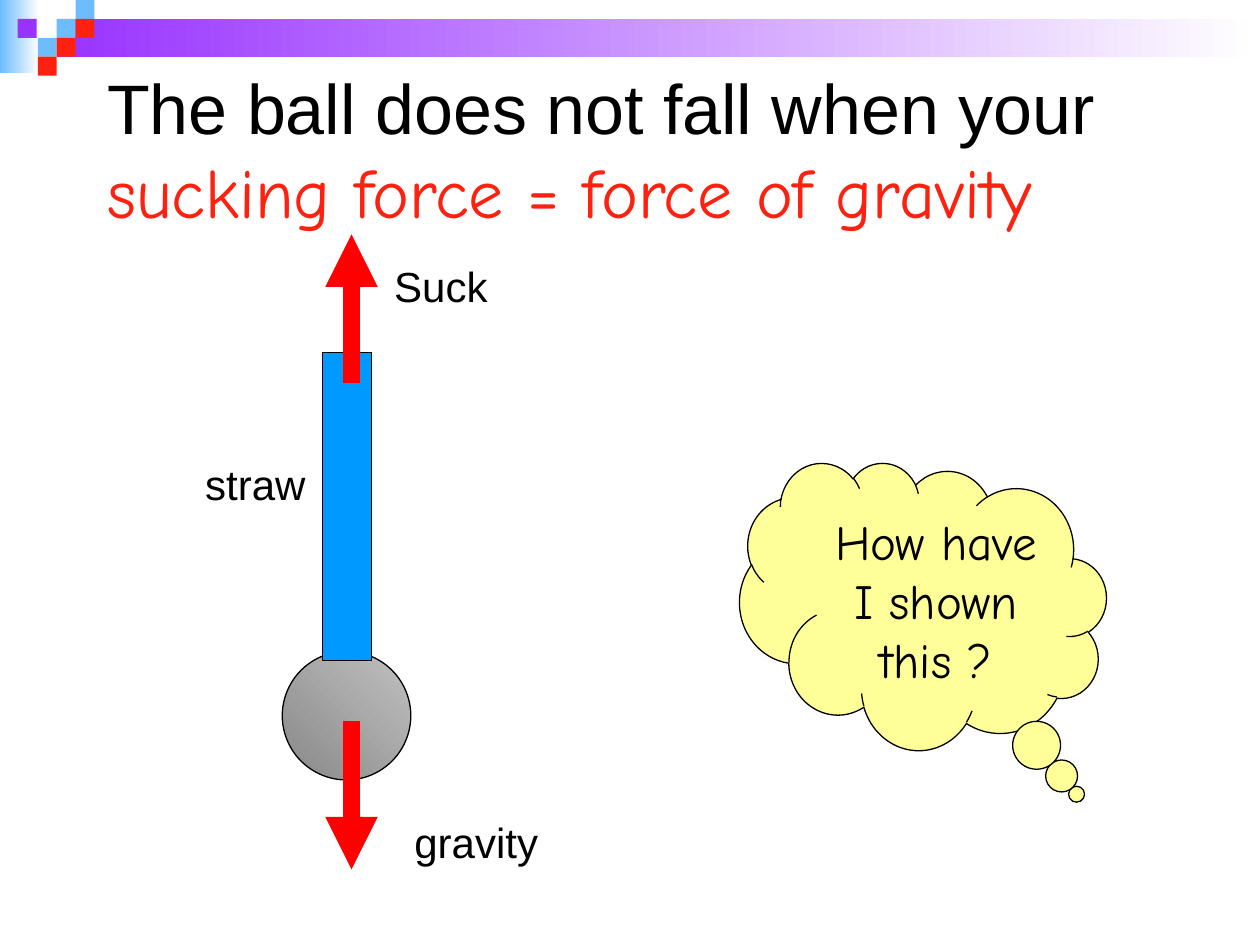
from typing import NamedTuple

from lxml.etree import SubElement
from pptx import Presentation
from pptx.dml.color import RGBColor
from pptx.enum.shapes import MSO_CONNECTOR, MSO_SHAPE
from pptx.enum.text import MSO_ANCHOR, MSO_AUTO_SIZE, PP_ALIGN
from pptx.oxml.ns import qn
from pptx.util import Inches, Pt

BLACK = RGBColor(0x00, 0x00, 0x00)
WHITE = RGBColor(0xFF, 0xFF, 0xFF)
PURPLE = RGBColor(0x99, 0x33, 0xFF)
SKY = RGBColor(0x6D, 0xBC, 0xFD)
SCARLET = RGBColor(0xFE, 0x21, 0x10)
ARROW_RED = RGBColor(0xFF, 0x00, 0x00)
STRAW_BLUE = RGBColor(0x00, 0x99, 0xFF)
DARK_GREY = RGBColor(0x89, 0x89, 0x89)
LIGHT_GREY = RGBColor(0xC0, 0xC0, 0xC0)
CLOUD_YELLOW = RGBColor(0xFF, 0xFF, 0x99)

TILE = 0.15
ARROW_X = 2.79


class Box(NamedTuple):
    left: float
    top: float
    width: float
    height: float

    def lengths(self):
        return [Inches(value) for value in self]


class Gradient(NamedTuple):
    start: RGBColor
    end: RGBColor
    angle: float = 0


class Tile(NamedTuple):
    left: float
    row: int
    color: RGBColor


class Label(NamedTuple):
    text: str
    box: Box


class Force(NamedTuple):
    start_y: float
    end_y: float


TILES = [
    Tile(0.45, 1, SKY),
    Tile(0.6, 0, SKY),
    Tile(0.6, 1, SCARLET),
    Tile(0.3, 2, SKY),
    Tile(0.14, 1, PURPLE),
    Tile(0.45, 2, SCARLET),
    Tile(0.3, 3, SCARLET),
]
FORCES = [Force(5.72, 6.9), Force(3.04, 1.86)]
LABELS = [
    Label("straw", Box(1.53, 3.59, 1.02, 0.5)),
    Label("Suck", Box(3.03, 2.02, 1.18, 0.5)),
    Label("gravity", Box(3.19, 6.43, 1.81, 0.5)),
]


def add_filled(slide, kind: MSO_SHAPE, box: Box, fill: RGBColor | Gradient,
               outlined: bool = False):
    shape = slide.shapes.add_shape(kind, *box.lengths())
    shape.shadow.inherit = False
    if isinstance(fill, Gradient):
        shape.fill.gradient()
        shape.fill.gradient_angle = fill.angle
        for stop, color in zip(shape.fill.gradient_stops, (fill.start, fill.end)):
            stop.color.rgb = color
    else:
        shape.fill.solid()
        shape.fill.fore_color.rgb = fill
    if outlined:
        shape.line.color.rgb = BLACK
        shape.line.width = Pt(0.75)
    else:
        shape.line.fill.background()
    return shape


def style_font(font, name: str, size: float, color: RGBColor) -> None:
    font.name = name
    font.size = Pt(size)
    font.color.rgb = color


def add_label(slide, label: Label) -> None:
    frame = slide.shapes.add_textbox(*label.box.lengths()).text_frame
    frame.word_wrap = True
    frame.text = label.text
    style_font(frame.paragraphs[0].font, "Arial", 24, BLACK)


def add_force(slide, force: Force) -> None:
    arrow = slide.shapes.add_connector(
        MSO_CONNECTOR.STRAIGHT, Inches(ARROW_X), Inches(force.start_y),
        Inches(ARROW_X), Inches(force.end_y))
    arrow.line.color.rgb = ARROW_RED
    arrow.line.width = Pt(10)
    SubElement(arrow.line._get_or_add_ln(), qn("a:tailEnd"), type="triangle")
    SubElement(arrow._element.spPr, qn("a:effectLst"))


def add_title(slide) -> None:
    title = slide.shapes.title
    title.left, title.top, title.width, title.height = Box(0.75, 0.5, 8.75, 1.36).lengths()
    frame = title.text_frame
    frame.auto_size = MSO_AUTO_SIZE.NONE
    frame.word_wrap = True
    frame.vertical_anchor = MSO_ANCHOR.MIDDLE
    heading = frame.paragraphs[0]
    heading.alignment = PP_ALIGN.LEFT
    for text, font_name, color in (
        ("The ball does not fall when your ", "Arial", BLACK),
        ("sucking force = force of gravity", "Comic Neue", SCARLET),
    ):
        run = heading.add_run()
        run.text = text
        style_font(run.font, font_name, 40, color)


def add_question(slide) -> None:
    cloud = add_filled(slide, MSO_SHAPE.CLOUD_CALLOUT, Box(5.87, 3.67, 2.91, 2.28),
                       CLOUD_YELLOW, outlined=True)
    cloud._element.spPr.xfrm.set("flipH", "1")
    cloud.adjustments[0] = -0.419
    cloud.adjustments[1] = 0.655
    frame = cloud.text_frame
    frame.word_wrap = True
    frame.vertical_anchor = MSO_ANCHOR.TOP
    frame.text = "How have I shown this ?"
    question = frame.paragraphs[0]
    question.alignment = PP_ALIGN.CENTER
    style_font(question.font, "Comic Neue", 28, BLACK)


def main() -> None:
    prs = Presentation()
    prs.slide_width, prs.slide_height = Inches(10), Inches(7.5)
    slide = prs.slides.add_slide(prs.slide_layouts[5])

    # Header band and tiles
    add_filled(slide, MSO_SHAPE.RECTANGLE, Box(0, 0, 0.31, 0.58), Gradient(SKY, WHITE))
    add_filled(slide, MSO_SHAPE.RECTANGLE, Box(0.45, 0.15, 9.55, 0.3),
               Gradient(PURPLE, WHITE))
    for tile in TILES:
        add_filled(slide, MSO_SHAPE.RECTANGLE,
                   Box(tile.left, tile.row * TILE, TILE, TILE), tile.color)

    add_title(slide)

    # Ball held on the straw, with the two forces
    add_filled(slide, MSO_SHAPE.OVAL, Box(2.24, 5.17, 1.02, 1.02),
               Gradient(DARK_GREY, LIGHT_GREY, 45), outlined=True)
    add_filled(slide, MSO_SHAPE.RECTANGLE, Box(2.56, 2.8, 0.39, 2.44),
               STRAW_BLUE, outlined=True)
    for force in FORCES:
        add_force(slide, force)
    for label in LABELS:
        add_label(slide, label)

    add_question(slide)
    prs.save("out.pptx")


if __name__ == "__main__":
    main()
